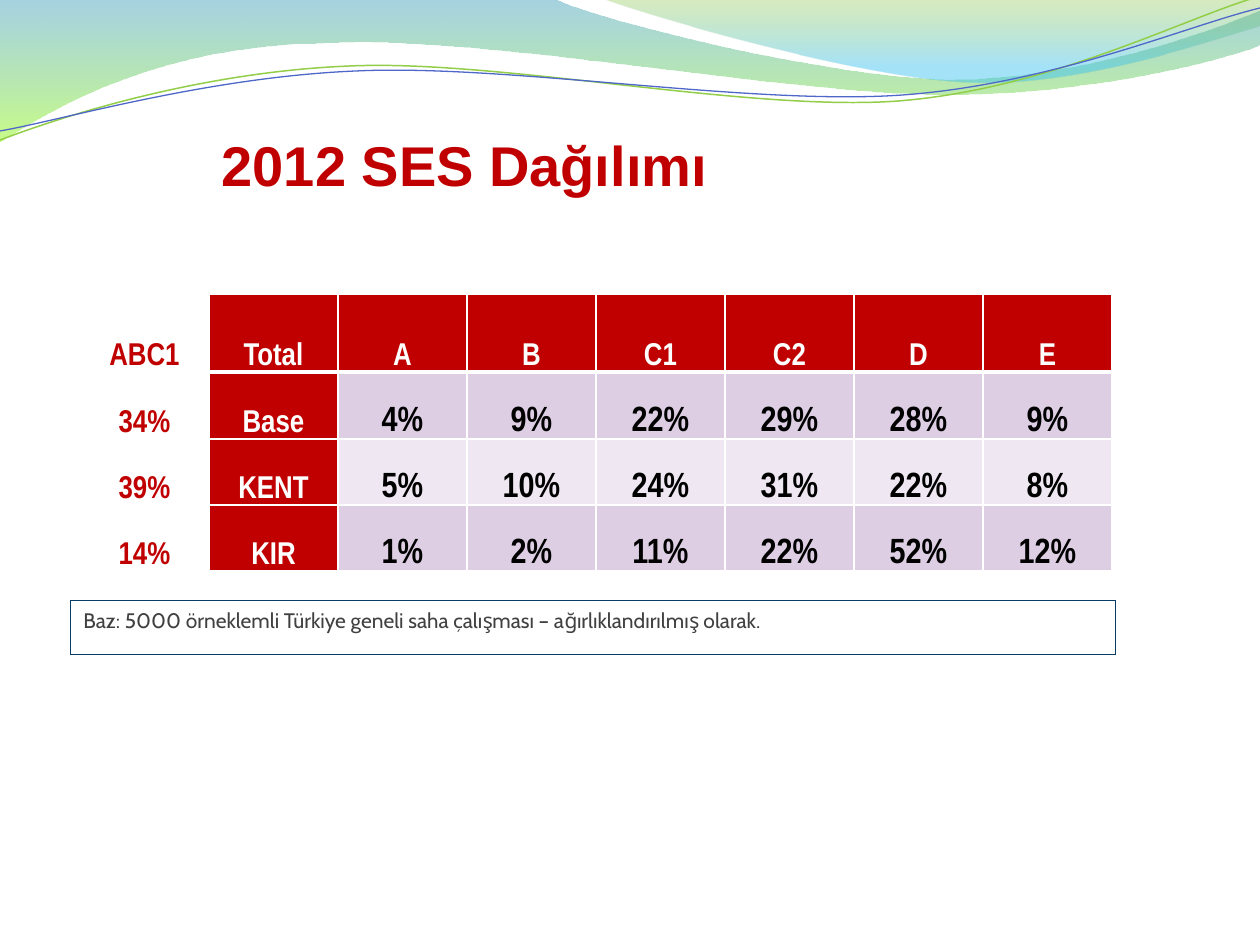
import lxml.etree
import pptx
import pptx.dml.color
import pptx.enum.shapes
import pptx.enum.text
import pptx.oxml.ns
import pptx.util

PX = 914400 // 126
RED, WHITE, BLACK = "C00000", "FFFFFF", "000000"
BANDS = ["DDCEE4", "EFE8F2"]

TITLE = "2012 SES Dağılımı"
NOTE = "Baz: 5000 örneklemli Türkiye geneli saha çalışması – ağırlıklandırılmış olarak."
ROWS = [
    ["ABC1", "Total", "A", "B", "C1", "C2", "D", "E"],
    ["34%", "Base", "4%", "9%", "22%", "29%", "28%", "9%"],
    ["39%", "KENT", "5%", "10%", "24%", "31%", "22%", "8%"],
    ["14%", "KIR", "1%", "2%", "11%", "22%", "52%", "12%"],
]
TABLE_LEFT, TABLE_TOP, COLUMN_WIDTH = 80, 294, 129
ROW_HEIGHTS = [78, 67, 66, 66]

# Each outline is a start point and segments: 2 numbers a line, 6 a Bezier curve.
# Gradient stops are (position, colour, opacity in percent).
BANNERS = [
    {"start": (0, 0),
     "segments": [(554, -1), (600, 21, 837, 79, 955, 79), (1075, 79, 1207, 33, 1260, 11),
                  (1261, 45), (1239, 55, 1096, 96, 940, 94), (784, 94, 481, 35, 324, 43),
                  (163, 45, 58, 105, -1, 142), (0, 0)],
     "stops": [(0, "3B9CBF", 45), (1, "9CFA24", 55)]},
    {"start": (603, -1),
     "segments": [(641, 14, 859, 78, 969, 82), (1079, 87, 1211, 40, 1260, 26), (1260, 0),
                  (603, -1)],
     "stops": [(0, "7EBE2C", 30), (0.8, "39C1F1", 45)]},
]
WAVES = [
    {"start": (0, 140),
     "segments": [(60, 117, 199, 72, 349, 66), (498, 59, 747, 112, 898, 101),
                  (1050, 89, 1182, 19, 1257, -3)],
     "line": ("93CE48", 0.85)},
    {"start": (0, 131),
     "segments": [(59, 121, 207, 77, 357, 71), (508, 64, 752, 106, 903, 95),
                  (1053, 84, 1186, 26, 1260, 8)],
     "line": ("4E67C8", 0.75)},
]


def color(value):
    return pptx.dml.color.RGBColor.from_string(value)


def add_outline(page, curve, close):
    """Build the outline from its corner points, then bend the curved segments."""
    segments = curve["segments"]
    x, y = curve["start"]
    builder = page.shapes.build_freeform(x * PX, y * PX)
    builder.add_line_segments([(s[-2] * PX, s[-1] * PX) for s in segments], close=close)
    shape = builder.convert_to_shape()
    shape.shadow.inherit = False
    lines = list(shape._element.spPr.iter(pptx.oxml.ns.qn("a:lnTo")))
    for line, segment in zip(lines, segments):
        if len(segment) == 2:
            continue
        bend = lxml.etree.Element(pptx.oxml.ns.qn("a:cubicBezTo"))
        for x, y in zip(segment[::2], segment[1::2]):
            lxml.etree.SubElement(bend, pptx.oxml.ns.qn("a:pt"),
                                  x=str(x * PX - shape.left), y=str(y * PX - shape.top))
        line.getparent().replace(line, bend)
    return shape


def add_banner(page, banner):
    shape = add_outline(page, banner, True)
    shape.line.fill.background()
    shape.fill.gradient()
    shape.fill.gradient_angle = 270
    for stop, (position, value, _) in zip(shape.fill.gradient_stops, banner["stops"]):
        stop.position = position
        stop.color.rgb = color(value)
    tags = shape._element.spPr.iter(pptx.oxml.ns.qn("a:srgbClr"))
    for tag, (_, _, opacity) in zip(tags, banner["stops"]):
        lxml.etree.SubElement(tag, pptx.oxml.ns.qn("a:alpha"), val=str(opacity * 1000))


def add_wave(page, wave):
    shape = add_outline(page, wave, False)
    shape.fill.background()
    shape.line.color.rgb = color(wave["line"][0])
    shape.line.width = pptx.util.Pt(wave["line"][1])


def write(frame, text, name, size, value, bold, align):
    para = frame.paragraphs[0]
    para.alignment = align
    span = para.add_run()
    span.text = text
    formats = {"name": name, "size": pptx.util.Pt(size), "bold": bold}
    for key, setting in formats.items():
        setattr(span.font, key, setting)
    span.font.color.rgb = color(value)


def set_borders(cell, widths):
    properties = cell._tc.get_or_add_tcPr()
    for index, (side, width) in enumerate(widths.items()):
        line = pptx.oxml.parse_xml(
            f'<a:{side} {pptx.oxml.ns.nsdecls("a")} w="{width * 12700}"><a:solidFill>'
            f'<a:srgbClr val="{WHITE}"/></a:solidFill></a:{side}>')
        properties.insert(index, line)


def cell_style(row, column):
    """Return fill, text colour and text size."""
    if column == 0:
        return WHITE, RED, 18
    if row == 0 or column == 1:
        return RED, WHITE, 18
    return BANDS[(row - 1) % 2], BLACK, 20


def add_table(page):
    frame = page.shapes.add_table(
        len(ROWS), len(ROWS[0]), TABLE_LEFT * PX, TABLE_TOP * PX,
        COLUMN_WIDTH * len(ROWS[0]) * PX, sum(ROW_HEIGHTS) * PX)
    table = frame.table
    table.horz_banding = False
    for column in table.columns:
        column.width = COLUMN_WIDTH * PX
    for r, (texts, height) in enumerate(zip(ROWS, ROW_HEIGHTS)):
        table.rows[r].height = height * PX
        for c, text in enumerate(texts):
            cell = table.cell(r, c)
            fill, value, size = cell_style(r, c)
            cell.fill.solid()
            cell.fill.fore_color.rgb = color(fill)
            formats = {"margin_left": 9 * PX, "margin_right": 9 * PX,
                       "margin_top": 0, "margin_bottom": 0,
                       "vertical_anchor": pptx.enum.text.MSO_ANCHOR.BOTTOM}
            for key, setting in formats.items():
                setattr(cell, key, setting)
            write(cell.text_frame, text, "Arial Narrow", size, value, True,
                  pptx.enum.text.PP_ALIGN.CENTER)
            set_borders(cell, {"lnL": 1, "lnR": 1, "lnT": 3 if r == 1 else 1,
                               "lnB": 3 if r == 0 else 1})


def add_note(page):
    box = page.shapes.add_shape(pptx.enum.shapes.MSO_SHAPE.RECTANGLE,
                                71 * PX, 601 * PX, 1045 * PX, 54 * PX)
    box.shadow.inherit = False
    box.fill.background()
    box.line.color.rgb = color("073C65")
    # Without the theme style the outline keeps the default hairline width.
    box._element.remove(box._element.find(pptx.oxml.ns.qn("p:style")))
    box.text_frame.word_wrap = True
    box.text_frame.vertical_anchor = pptx.enum.text.MSO_ANCHOR.TOP
    write(box.text_frame, NOTE, "Cabin", 12, "404040", False,
          pptx.enum.text.PP_ALIGN.LEFT)


def place_title(page):
    title = page.shapes.title
    place = {"left": 209, "top": 123, "width": 515, "height": 81}
    for key, length in place.items():
        setattr(title, key, length * PX)
    formats = {"word_wrap": False, "auto_size": pptx.enum.text.MSO_AUTO_SIZE.NONE,
               "vertical_anchor": pptx.enum.text.MSO_ANCHOR.BOTTOM}
    for key, setting in formats.items():
        setattr(title.text_frame, key, setting)
    write(title.text_frame, TITLE, "Arial", 32, RED, True, pptx.enum.text.PP_ALIGN.LEFT)


def main():
    deck = pptx.Presentation()
    deck.slide_width, deck.slide_height = pptx.util.Inches(10), pptx.util.Inches(7.5)
    page = deck.slides.add_slide(deck.slide_layouts[5])
    for banner in BANNERS:
        add_banner(page, banner)
    for wave in WAVES:
        add_wave(page, wave)
    add_note(page)
    place_title(page)
    add_table(page)
    deck.save("out.pptx")


if __name__ == "__main__":
    main()
